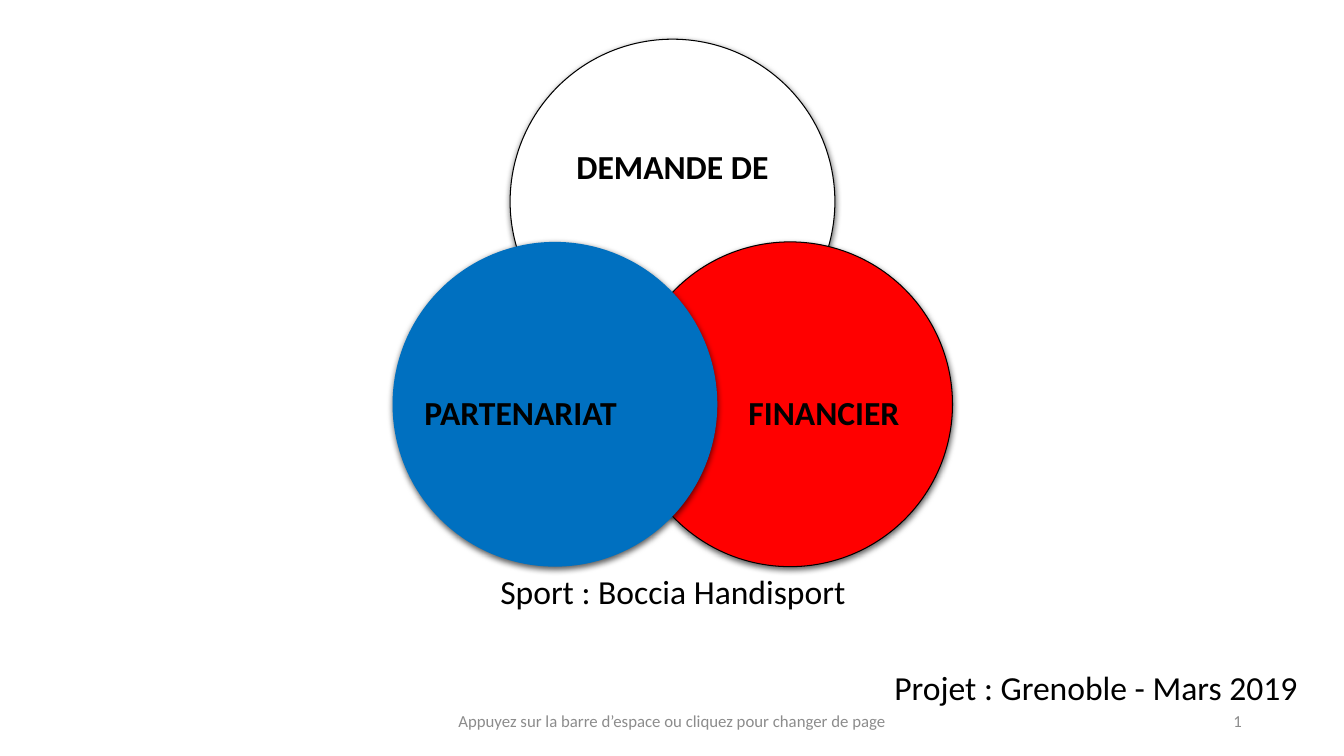
from lxml import etree
from pptx import Presentation
from pptx.dml.color import RGBColor
from pptx.enum import shapes, text
from pptx.oxml import ns
from pptx.util import Pt

COLORS = {
    "white": "FFFFFF",
    "red": "FF0000",
    "blue": "0070C0",
    "black": "000000",
    "gray": "8C8C8C",
}
LEFT, CENTER, RIGHT = text.PP_ALIGN.LEFT, text.PP_ALIGN.CENTER, text.PP_ALIGN.RIGHT
TOP, MIDDLE = text.MSO_ANCHOR.TOP, text.MSO_ANCHOR.MIDDLE


class SlideBuilder:
    font_name = "Calibri"

    def __init__(self, slide):
        self.slide = slide

    def color(self, name):
        return RGBColor.from_string(COLORS[name])

    def soft_shadow(self, shape):
        """Give the shape a blurred black shadow falling straight down."""
        effects = etree.SubElement(shape._element.spPr, ns.qn("a:effectLst"))
        shadow = etree.SubElement(
            effects, ns.qn("a:outerShdw"), blurRad=str(Pt(4.5)), dist=str(Pt(1.5)),
            dir="5400000", algn="ctr", rotWithShape="0")
        black = etree.SubElement(shadow, ns.qn("a:srgbClr"), val=COLORS["black"])
        etree.SubElement(black, ns.qn("a:alpha"), val="63000")

    def circle(self, left, top, diameter, fill, outline):
        shape = self.slide.shapes.add_shape(
            shapes.MSO_SHAPE.OVAL, Pt(left), Pt(top), Pt(diameter), Pt(diameter))
        shape.fill.solid()
        shape.fill.fore_color.rgb = self.color(fill)
        if outline:
            shape.line.color.rgb = self.color(outline)
            shape.line.width = Pt(0.75)
        else:
            shape.line.fill.background()
        self.soft_shadow(shape)

    def text_box(self, box, paragraphs, size=24, color="black", bold=False,
                 anchor=MIDDLE, insets=(7.2, 3.6)):
        """Paragraphs are (words, alignment, line spacing, space before)."""
        shape = self.slide.shapes.add_textbox(*map(Pt, box))
        frame = shape.text_frame
        frame.word_wrap = True
        frame.vertical_anchor = anchor
        frame.margin_left = frame.margin_right = Pt(insets[0])
        frame.margin_top = frame.margin_bottom = Pt(insets[1])
        for index, (words, alignment, spacing, before) in enumerate(paragraphs):
            paragraph = frame.add_paragraph() if index else frame.paragraphs[0]
            paragraph.text = words
            paragraph.alignment = alignment
            paragraph.line_spacing = spacing
            paragraph.space_before = Pt(before)
            paragraph.font.name = self.font_name
            paragraph.font.size = Pt(size)
            paragraph.font.bold = bold
            paragraph.font.color.rgb = self.color(color)


def main():
    presentation = Presentation()
    presentation.slide_width, presentation.slide_height = Pt(960), Pt(540)
    builder = SlideBuilder(presentation.slides.add_slide(presentation.slide_layouts[6]))

    diameter, middle, offset = 232, 480.4, 84
    upper, lower = 28, 172.8
    venn = [
        ("DEMANDE DE", 0, upper, "white", "black", (395.3, 68.4, 170, 104.4)),
        ("FINANCIER", offset, lower, "red", "black", (519.1, 232.6, 139, 127.4)),
        ("PARTENARIAT", -offset, lower, "blue", None, (302.4, 232.6, 139, 127.4)),
    ]
    for label, shift, top, fill, outline, label_box in venn:
        builder.circle(middle + shift - diameter / 2, top, diameter, fill, outline)
        builder.text_box(label_box, [(label, CENTER, 0.9, 0)], bold=True, insets=(0, 0))

    builder.text_box((27.4, 409.7, 906.5, 100.8), [
        ("Sport : Boccia Handisport", CENTER, 0.8, 0),
        ("Projet : Grenoble - Mars 2019", RIGHT, 0.9, 43),
    ], anchor=TOP)

    footers = [
        ("1", RIGHT, 678.2, 216),
        ("Appuyez sur la barre d’espace ou cliquez pour changer de page", CENTER, 318.2, 324),
    ]
    for words, alignment, left, width in footers:
        builder.text_box((left, 500.4, width, 28.8), [(words, alignment, 1.0, 0)],
                         size=12, color="gray")

    presentation.save("out.pptx")


if __name__ == "__main__":
    main()
